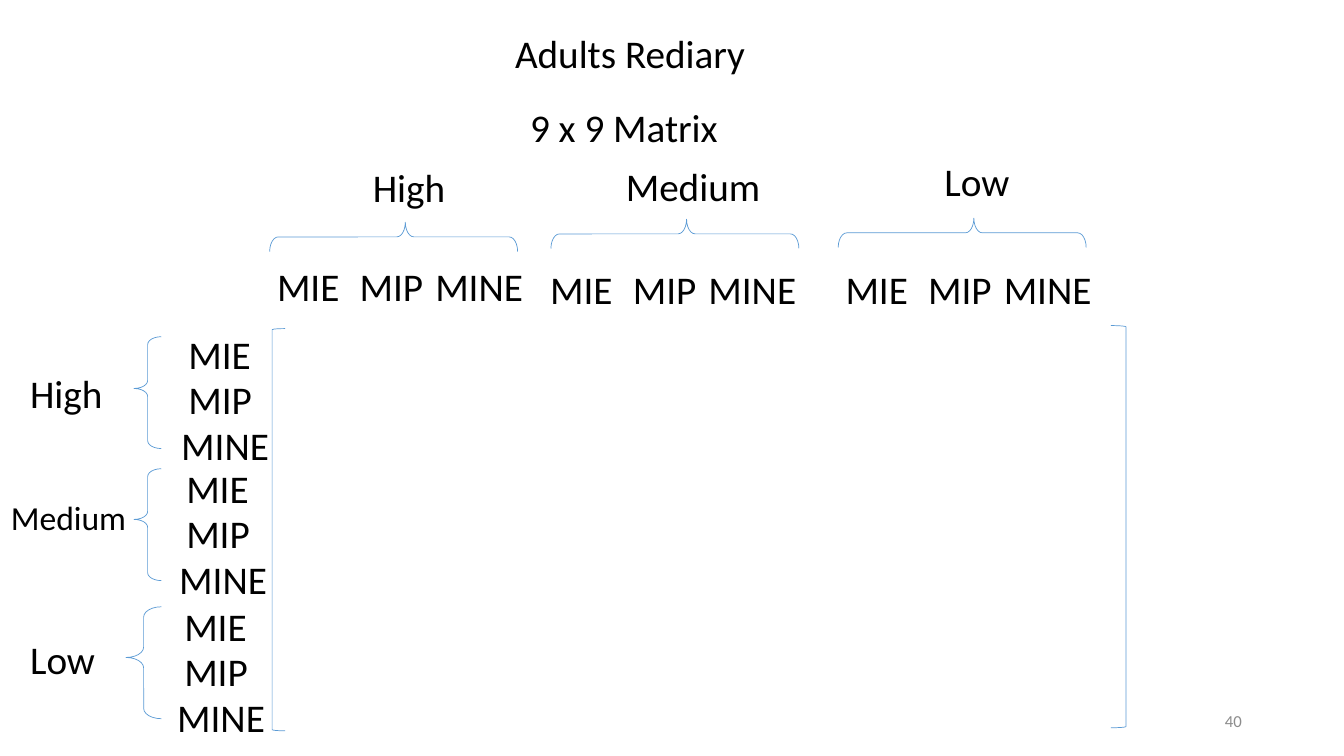
from dataclasses import dataclass

from pptx import Presentation
from pptx.dml.color import RGBColor
from pptx.enum.shapes import MSO_SHAPE as Shape
from pptx.enum.text import MSO_ANCHOR as Anchor, MSO_AUTO_SIZE as AutoSize, PP_ALIGN as Align
from pptx.util import Inches, Pt

COLS, ROWS = 133.33, 75
CELL = Inches(0.1)
INK, ACCENT, GRAY = "000000", "5B9BD5", "8C8C8C"
ITEMS = ("MIE", "MIP", "MINE")
TOP_STEPS = ((0, 0), (8.2, 0), (15.7, 0))
SIDE_STEPS = ((0, 0), (0, 4.4), (-0.7, 9))


@dataclass(frozen=True)
class Box:
    """A rectangle in grid columns and rows."""
    col: float
    row: float
    cols: float
    rows: float = 5.7


@dataclass(frozen=True)
class Group:
    """A named level with its brace and the place of its first item."""
    label: str
    label_box: Box
    brace: Box
    first: tuple[float, float]
    size: int = 28
    tip: float = 0.453


TOP_GROUPS = (
    Group("High", Box(36, 15.7, 11.2), Box(37.6, 11.2, 2.9, 24.6), (26.5, 25.5)),
    Group("Medium", Box(61.1, 15.6, 16.2), Box(65.5, 10.9, 2.9, 24.6), (53.6, 25.8)),
    Group("Low", Box(92.7, 15.1, 11.2), Box(94, 10.8, 2.9, 24.6), (82.9, 25.8)),
)
SIDE_GROUPS = (
    Group("High", Box(2, 36.1, 11.2), Box(13.3, 33.4, 2.7, 11.1), (17.7, 32.3), tip=0.463),
    Group("Medium", Box(0.1, 48.8, 16.4, 5), Box(13.3, 46.5, 2.7, 11.1), (17.5, 45.6), 24),
    Group("Low", Box(2, 62.5, 11.2), Box(12.5, 60.2, 3.5, 11.1), (17.3, 59.3)),
)


def rgb(value: str) -> RGBColor:
    """Turn a hex string into a colour."""
    return RGBColor.from_string(value)


def place(box: Box) -> tuple[int, ...]:
    """Convert a grid box to slide lengths."""
    return tuple(round(n * CELL) for n in (box.col, box.row, box.cols, box.rows))


def add_text(s, text: str, box: Box, size: int = 28, color: str = INK,
             align: Align = Align.LEFT, anchor: Anchor = Anchor.TOP,
             fit: AutoSize = AutoSize.SHAPE_TO_FIT_TEXT, spacing: float = 1.0) -> None:
    """Write one line of text in a box."""
    tf = s.shapes.add_textbox(*place(box)).text_frame
    tf.word_wrap, tf.auto_size, tf.vertical_anchor = True, fit, anchor
    p = tf.paragraphs[0]
    p.text, p.alignment, p.line_spacing = text, align, spacing
    p.font.name, p.font.size, p.font.color.rgb = "Calibri", Pt(size), rgb(color)


def add_outline(s, kind: Shape, box: Box, turn: int = 0, adjust: tuple[float, ...] = ()) -> None:
    """Draw a thin brace or bracket."""
    sp = s.shapes.add_shape(kind, *place(box))
    sp.shadow.inherit = False
    sp.fill.background()
    sp.line.color.rgb, sp.line.width = rgb(ACCENT), Pt(0.5)
    sp.rotation = turn
    for i, value in enumerate(adjust):
        sp.adjustments[i] = value


def add_group(s, group: Group, steps: tuple[tuple[float, float], ...], turn: int) -> None:
    """Draw a level's label, brace and items."""
    add_text(s, group.label, group.label_box, group.size)
    add_outline(s, Shape.LEFT_BRACE, group.brace, turn, (0.292, group.tip))
    col, row = group.first
    for item, (right, down) in zip(ITEMS, steps):
        add_text(s, item, Box(col + right, row + down, 11.7))


def main() -> None:
    """Build the matrix slide and save it."""
    prs = Presentation()
    prs.slide_width, prs.slide_height = round(COLS * CELL), ROWS * CELL
    s = prs.slides.add_slide(prs.slide_layouts[6])
    add_text(s, "Adults Rediary", Box(12.5, 2.7, 100, 5.4), align=Align.CENTER,
             anchor=Anchor.BOTTOM, fit=AutoSize.NONE, spacing=0.9)
    add_text(s, "9 x 9 Matrix", Box(51.6, 9.8, 26))
    for groups, steps, turn in ((TOP_GROUPS, TOP_STEPS, 90), (SIDE_GROUPS, SIDE_STEPS, 0)):
        for group in groups:
            add_group(s, group, steps, turn)
    add_outline(s, Shape.LEFT_BRACKET, Box(27, 32.6, 1.3, 39.9))
    add_outline(s, Shape.RIGHT_BRACKET, Box(110.2, 32.3, 1.5, 39.9))
    add_text(s, "40", Box(94.2, 69.5, 30, 4), 12, GRAY, Align.RIGHT, Anchor.MIDDLE, AutoSize.NONE)
    prs.save("out.pptx")


if __name__ == "__main__":
    main()
